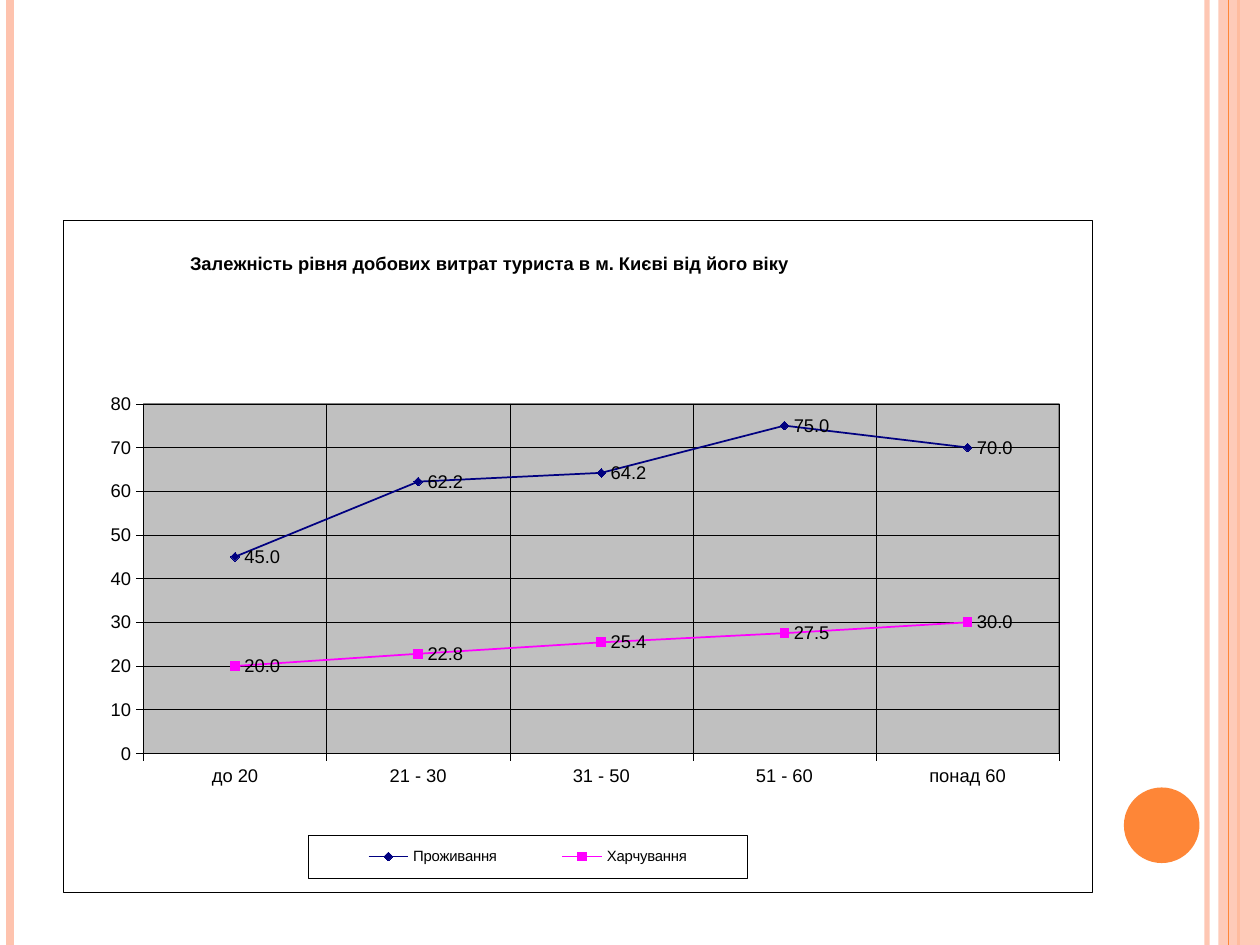
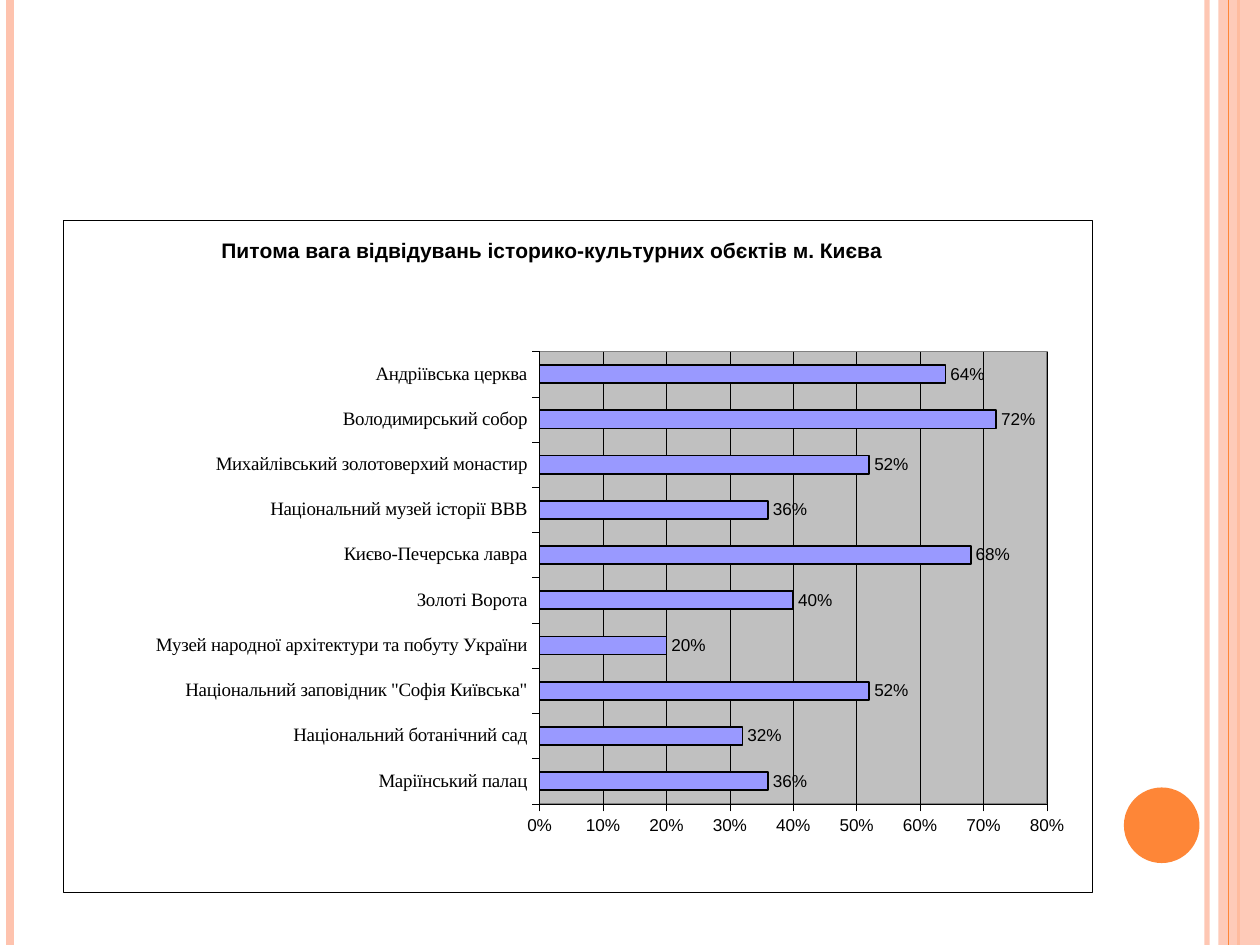
"""Build two slides with charts on tourist spending and sightseeing in Kyiv."""
from lxml import etree
from pptx import Presentation
from pptx.chart.data import CategoryChartData
from pptx.dml.color import RGBColor
from pptx.enum import chart as kinds, shapes
from pptx.oxml import parse_xml
from pptx.oxml.ns import nsdecls, qn
from pptx.util import Inches, Pt

COLOURS = {
    "ink": "000000", "paper": "FFFFFF", "peach": "FEC3AE", "orange": "FE8637",
    "plot": "C0C0C0", "frame": "808080", "navy": "000080", "magenta": "FF00FF", "lilac": "9999FF",
}
BLANK_LAYOUT = 6
HAIRLINE = 0.25


class SlideBuilder:
    """Holds the deck style and the current slide."""

    def __init__(self):
        self.deck = Presentation()
        self.deck.slide_width, self.deck.slide_height = Inches(10), Inches(7.5)
        self.slide = None

    def colour(self, name):
        return RGBColor.from_string(COLOURS[name])

    def new_slide(self):
        self.slide = self.deck.slides.add_slide(self.deck.slide_layouts[BLANK_LAYOUT])
        self.stripe(9.58, "peach", 3, 93)
        self.stripe(0.08, "peach", 4.5)
        self.stripe(9.83, "orange", 1.5)
        self.shape(shapes.MSO_SHAPE.RECTANGLE, 9.67, 0, 0.33, 7.5, "peach", 87)
        self.stripe(9.75, "orange", 0.75)
        self.shape(shapes.MSO_SHAPE.OVAL, 8.92, 6.25, 0.6, 0.6, "orange")

    def set_opacity(self, item, percent):
        for tone in item.element.spPr.iter(qn("a:srgbClr")):
            etree.SubElement(tone, qn("a:alpha")).set("val", str(percent * 1000))

    def stripe(self, x, colour, width, opacity=100):
        line = self.slide.shapes.add_connector(
            shapes.MSO_CONNECTOR.STRAIGHT, Inches(x), Inches(0), Inches(x), Inches(7.5))
        self.outline(line.line, colour, width)
        if opacity < 100:
            self.set_opacity(line, opacity)
        etree.SubElement(line.element.spPr, qn("a:effectLst"))

    def shape(self, preset, left, top, width, height, colour, opacity=100):
        shape = self.slide.shapes.add_shape(
            preset, Inches(left), Inches(top), Inches(width), Inches(height))
        shape.shadow.inherit = False
        self.fill(shape.fill, colour)
        shape.line.fill.background()
        if opacity < 100:
            self.set_opacity(shape, opacity)

    def fill(self, fill, colour):
        fill.solid()
        fill.fore_color.rgb = self.colour(colour)

    def outline(self, line, colour="ink", width=HAIRLINE):
        line.color.rgb = self.colour(colour)
        line.width = Pt(width)

    def font(self, font, size, name="Arial", bold=False):
        font.name, font.size, font.bold = name, Pt(size), bold
        font.color.rgb = self.colour("ink")

    def panel(self, fill, line, width=HAIRLINE):
        return parse_xml(
            f'<c:spPr {nsdecls("c", "a")}>'
            f'<a:solidFill><a:srgbClr val="{COLOURS[fill]}"/></a:solidFill>'
            f'<a:ln w="{Pt(width)}"><a:solidFill><a:srgbClr val="{COLOURS[line]}"/>'
            '</a:solidFill></a:ln></c:spPr>')

    def place(self, part, index, left, top, width=None, height=None, inner=False):
        for old in part.findall(qn("c:layout")):
            part.remove(old)
        layout = etree.Element(qn("c:layout"))
        manual = etree.SubElement(layout, qn("c:manualLayout"))
        settings = [("layoutTarget", "inner")] if inner else []
        settings += [("xMode", "edge"), ("yMode", "edge"), ("x", left), ("y", top)]
        if width:
            settings += [("w", width), ("h", height)]
        for tag, value in settings:
            etree.SubElement(manual, qn(f"c:{tag}")).set("val", str(value))
        part.insert(index, layout)

    def chart(self, kind, categories, series, size, plot_place):
        data = CategoryChartData()
        data.categories = categories
        for name, values in series.items():
            data.add_series(name, values)
        frame = self.slide.shapes.add_chart(
            kind, Inches(0.5), Inches(1.75), Inches(8.17), Inches(5.33), data)
        chart = frame.chart
        self.font(chart.font, size)
        chart.has_legend = False
        chart.element.find(qn("c:txPr")).addprevious(self.panel("paper", "ink"))
        plot_area = chart.element.find(qn("c:chart")).find(qn("c:plotArea"))
        self.place(plot_area, 0, *plot_place, inner=True)
        plot_area.append(self.panel("plot", "frame", 1))
        return chart

    def title(self, chart, wording, size, left, top):
        chart.has_title = True
        title = chart.chart_title
        title.include_in_layout = False
        para = title.text_frame.paragraphs[0]
        para.text = wording
        self.font(para.font, size, bold=True)
        self.place(title.element, 1, left, top)

    def axis(self, axis, size, name="Arial", grid=True):
        axis.major_tick_mark = kinds.XL_TICK_MARK.OUTSIDE
        axis.minor_tick_mark = kinds.XL_TICK_MARK.NONE
        self.font(axis.tick_labels.font, size, name)
        self.outline(axis.format.line)
        axis.has_major_gridlines = grid
        if grid:
            self.outline(axis.major_gridlines.format.line)

    def scale(self, axis, maximum, step, number_format):
        axis.minimum_scale, axis.maximum_scale, axis.major_unit = 0, maximum, step
        axis.tick_labels.number_format = number_format
        axis.tick_labels.number_format_is_linked = False

    def labels(self, series, size, number_format, position):
        labels = series.data_labels
        labels.show_value = True
        labels.number_format, labels.number_format_is_linked = number_format, False
        labels.position = position
        self.font(labels.font, size)

    def legend(self, chart, size, *place):
        chart.has_legend = True
        chart.legend.position = kinds.XL_LEGEND_POSITION.BOTTOM
        chart.legend.include_in_layout = False
        self.font(chart.legend.font, size)
        legend = chart.element.find(qn("c:chart")).find(qn("c:legend"))
        self.place(legend, 1, *place)
        legend.find(qn("c:txPr")).addprevious(self.panel("paper", "ink"))


def add_spending_slide(builder):
    builder.new_slide()
    spending = {
        "Проживання": (45, 62.2, 64.2, 75, 70),
        "Харчування": (20, 22.8, 25.4, 27.5, 30),
    }
    ages = ("до 20", "21 - 30", "31 - 50", "51 - 60", "понад 60")
    chart = builder.chart(kinds.XL_CHART_TYPE.LINE_MARKERS, ages, spending, 9.5,
                          (0.078, 0.273, 0.89, 0.521))
    builder.title(chart, "Залежність рівня добових витрат туриста в м. Києві від його віку",
                  10.5, 0.12, 0.04)
    for axis in (chart.category_axis, chart.value_axis):
        builder.axis(axis, 10.5)
    builder.scale(chart.value_axis, 80, 10, "0")
    builder.legend(chart, 8.5, 0.238, 0.915, 0.427, 0.065)
    markers = (("navy", kinds.XL_MARKER_STYLE.DIAMOND), ("magenta", kinds.XL_MARKER_STYLE.SQUARE))
    for series, (colour, style) in zip(chart.plots[0].series, markers):
        series.smooth = False
        builder.outline(series.format.line, colour, 1)
        series.marker.style, series.marker.size = style, 5
        builder.fill(series.marker.format.fill, colour)
        builder.outline(series.marker.format.line, colour)
        builder.labels(series, 10.5, "0.0", kinds.XL_LABEL_POSITION.RIGHT)
    chart.plots[0].vary_by_categories = False


def add_visits_slide(builder):
    builder.new_slide()
    visits = {
        "Маріїнський палац": 0.36,
        "Національний ботанічний сад": 0.32,
        'Національний заповідник "Софія Київська"': 0.52,
        "Музей народної архітектури та побуту України": 0.2,
        "Золоті Ворота": 0.4,
        "Києво-Печерська лавра": 0.68,
        "Національний музей історії ВВВ": 0.36,
        "Михайлівський золотоверхий монастир": 0.52,
        "Володимирський собор": 0.72,
        "Андріївська церква": 0.64,
    }
    chart = builder.chart(kinds.XL_CHART_TYPE.BAR_CLUSTERED, visits.keys(),
                          {"Series 1": visits.values()}, 9.8, (0.463, 0.195, 0.493, 0.674))
    builder.title(chart, "Питома вага відвідувань історико-культурних обєктів м. Києва",
                  12, 0.15, 0.02)
    builder.axis(chart.category_axis, 10.8, "Times New Roman", grid=False)
    builder.axis(chart.value_axis, 9.8)
    builder.scale(chart.value_axis, 0.8, 0.1, "0%")
    plot = chart.plots[0]
    plot.gap_width, plot.vary_by_categories = 150, False
    bars = plot.series[0]
    builder.fill(bars.format.fill, "lilac")
    builder.outline(bars.format.line, width=1)
    builder.labels(bars, 9.8, "0%", kinds.XL_LABEL_POSITION.OUTSIDE_END)


def main():
    builder = SlideBuilder()
    add_spending_slide(builder)
    add_visits_slide(builder)
    builder.deck.save("out.pptx")


if __name__ == "__main__":
    main()
